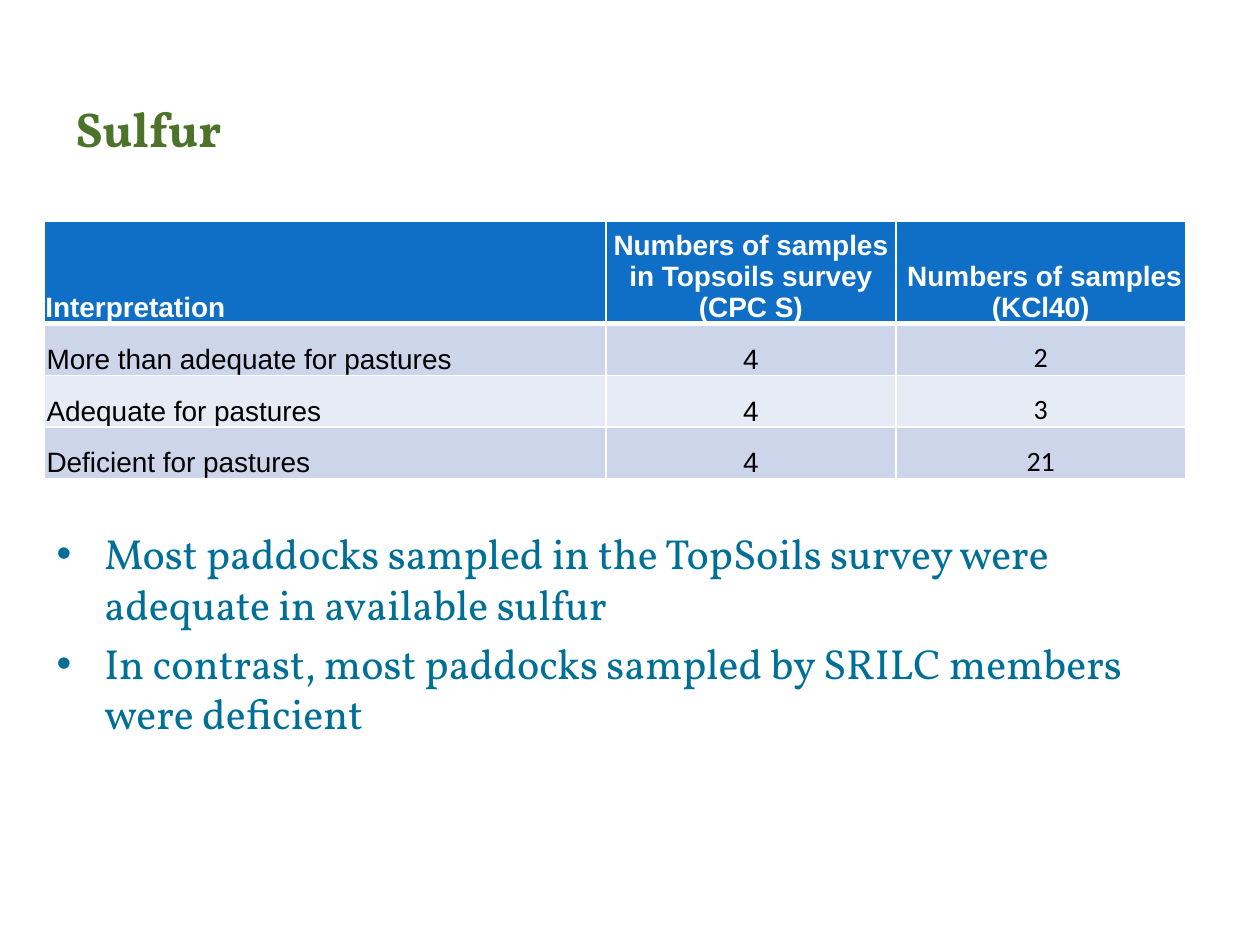
from lxml.etree import SubElement
from pptx import Presentation
from pptx.dml.color import RGBColor
from pptx.enum.text import MSO_ANCHOR, PP_ALIGN
from pptx.oxml.ns import qn
from pptx.util import Inches, Pt

GREEN = RGBColor(0x4C, 0x73, 0x29)
TEAL = RGBColor(0x00, 0x6F, 0x97)
BLUE = RGBColor(0x0F, 0x6F, 0xC6)
DARK_BAND = RGBColor(0xCC, 0xD5, 0xEA)
LIGHT_BAND = RGBColor(0xE7, 0xEB, 0xF5)
WHITE = RGBColor(0xFF, 0xFF, 0xFF)
BLACK = RGBColor(0x00, 0x00, 0x00)

SAMPLE_ROWS = [
    ("Interpretation", "Numbers of samples in Topsoils survey (CPC S)",
     " Numbers of samples (KCl40)"),
    ("More than adequate for pastures", "4", "2"),
    ("Adequate for pastures", "4", "3"),
    ("Deficient for pastures", "4", "21"),
]
COLUMN_WIDTHS = (4.46, 2.3, 2.3)
ROW_HEIGHTS = (0.74, 0.41, 0.41, 0.41)
FINDINGS = [
    "Most paddocks sampled in the TopSoils survey were adequate in available sulfur",
    "In contrast, most paddocks sampled by SRILC members were deficient",
]


def write_text(paragraph, text, *, font, size, color, bold=False,
               align=PP_ALIGN.LEFT, bullet=None, indent=0, space_before=0):
    paragraph.alignment = align
    paragraph.space_before = Pt(space_before)
    if bullet:
        properties = paragraph._p.get_or_add_pPr()
        properties.set("marL", str(Inches(indent)))
        properties.set("indent", str(-Inches(indent)))
        SubElement(properties, qn("a:buFont"), typeface="Arial")
        SubElement(properties, qn("a:buChar"), char=bullet)
    run = paragraph.add_run()
    run.text = text
    run.font.name = font
    run.font.size = Pt(size)
    run.font.bold = bold
    run.font.color.rgb = color


def add_text_frame(slide, box, anchor):
    frame = slide.shapes.add_textbox(*map(Inches, box)).text_frame
    frame.word_wrap = True
    frame.vertical_anchor = anchor
    return frame


def set_borders(cell, bottom_width):
    properties = cell._tc.get_or_add_tcPr()
    widths = {"a:lnL": 1, "a:lnR": 1, "a:lnT": 1, "a:lnB": bottom_width}
    for position, (tag, width) in enumerate(widths.items()):
        line = SubElement(properties, qn(tag), w=str(Pt(width)))
        fill = SubElement(line, qn("a:solidFill"))
        SubElement(fill, qn("a:srgbClr"), val=str(WHITE))
        properties.insert(position, line)  # borders precede the fill


def add_title(slide, box):
    frame = add_text_frame(slide, box, MSO_ANCHOR.MIDDLE)
    write_text(frame.paragraphs[0], "Sulfur", font="Vollkorn", size=28,
               color=GREEN, bold=True)


def add_sample_table(slide, box):
    table = slide.shapes.add_table(len(SAMPLE_ROWS), len(COLUMN_WIDTHS),
                                   *map(Inches, box)).table
    for column, width in zip(table.columns, COLUMN_WIDTHS):
        column.width = Inches(width)
    for row, height in zip(table.rows, ROW_HEIGHTS):
        row.height = Inches(height)

    for row_index, texts in enumerate(SAMPLE_ROWS):
        header = row_index == 0
        band = DARK_BAND if row_index % 2 else LIGHT_BAND
        for column_index, text in enumerate(texts):
            cell = table.cell(row_index, column_index)
            cell.fill.solid()
            cell.fill.fore_color.rgb = BLUE if header else band
            cell.vertical_anchor = MSO_ANCHOR.BOTTOM
            cell.margin_left = cell.margin_right = Inches(0.01 if header else 0.02)
            cell.margin_top = Inches(0.01)
            cell.margin_bottom = 0
            # The header has a heavier rule below it, shared with the first row
            set_borders(cell, bottom_width=3 if header else 1)
            write_text(cell.text_frame.paragraphs[0], text,
                       font="Calibri" if column_index == 2 and not header else "Arial",
                       size=16, color=WHITE if header else BLACK, bold=header,
                       align=PP_ALIGN.CENTER if column_index else PP_ALIGN.LEFT)


def add_findings(slide, box):
    frame = add_text_frame(slide, box, MSO_ANCHOR.TOP)
    for index, text in enumerate(FINDINGS):
        paragraph = frame.add_paragraph() if index else frame.paragraphs[0]
        write_text(paragraph, text, font="Vollkorn", size=24, color=TEAL,
                   bullet="•", indent=0.38, space_before=5 if index else 0)


def main():
    presentation = Presentation()
    presentation.slide_width = Inches(10)
    presentation.slide_height = Inches(7.5)
    slide = presentation.slides.add_slide(presentation.slide_layouts[6])

    add_title(slide, (0.5, 0.48, 9, 1.07))
    add_sample_table(slide, (0.35, 1.76, sum(COLUMN_WIDTHS), sum(ROW_HEIGHTS)))
    add_findings(slide, (0.35, 4.14, 9.29, 2.42))

    presentation.save("out.pptx")


if __name__ == "__main__":
    main()
